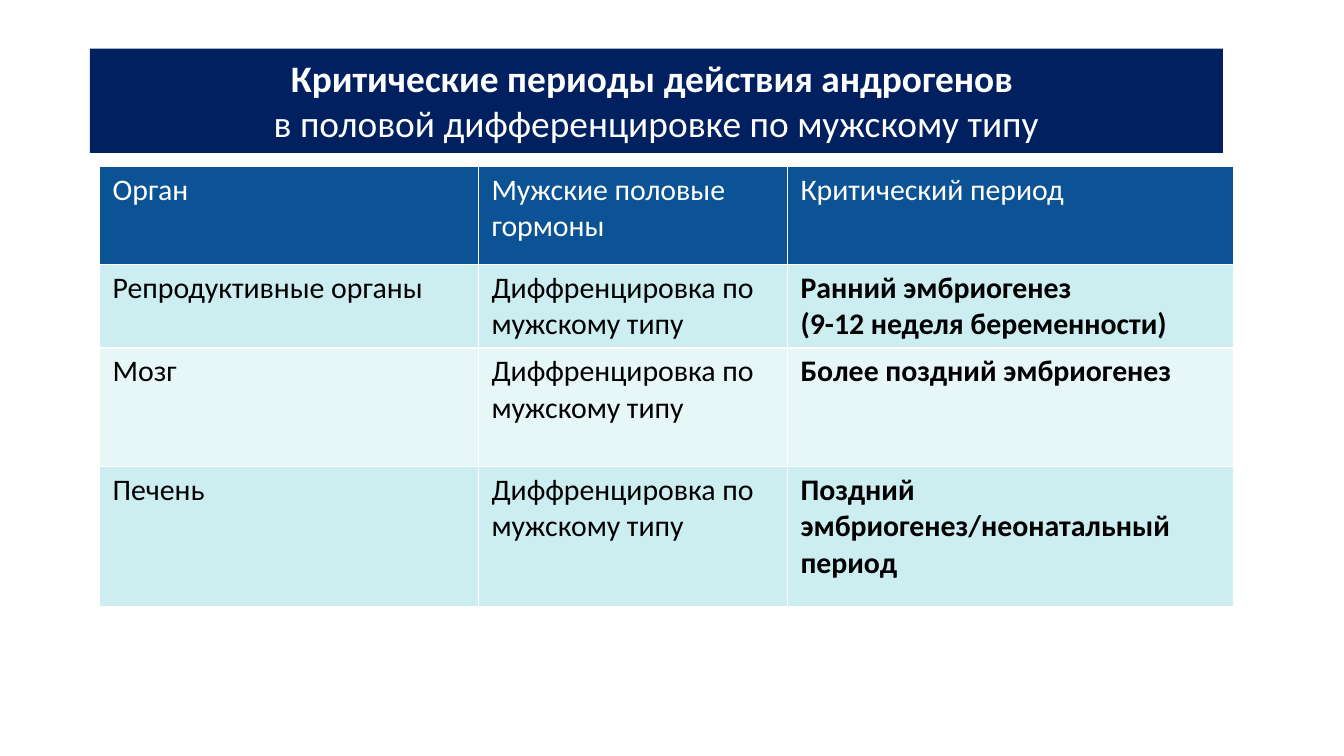
from dataclasses import dataclass

from pptx import Presentation
from pptx.dml.color import RGBColor
from pptx.enum.text import MSO_ANCHOR, MSO_AUTO_SIZE, PP_ALIGN
from pptx.slide import Slide
from pptx.text.text import TextFrame
from pptx.util import Cm, Pt

FONT = "Calibri"
WHITE = "FFFFFF"
BLACK = "000000"
NAVY = "002060"
BLUE = "0B5394"
AQUA = "CCEEF1"
PALE_AQUA = "E7F7F8"
TITLE_ONLY = 5
COLUMN_WIDTHS = (7.16, 5.84, 8.43)
EFFECT = "Диффренцировка по мужскому типу"


@dataclass
class Row:
    height: float
    fill: str
    color: str
    texts: tuple[str, str, str]
    bold_period: bool = True


ROWS = (
    Row(1.85, BLUE, WHITE,
        ("Орган", "Мужские половые гормоны", "Критический период"), False),
    Row(1.55, AQUA, BLACK,
        ("Репродуктивные органы", EFFECT,
         "Ранний эмбриогенез\n(9-12 неделя беременности)")),
    Row(2.24, PALE_AQUA, BLACK, ("Мозг", EFFECT, "Более поздний эмбриогенез")),
    Row(2.64, AQUA, BLACK,
        ("Печень", EFFECT, "Поздний эмбриогенез/неонатальный период")),
)


def rgb(value: str) -> RGBColor:
    return RGBColor.from_string(value)


def format_text(frame: TextFrame, size: float, color: str, bold: bool,
                alignment: PP_ALIGN) -> None:
    for paragraph in frame.paragraphs:
        paragraph.alignment = alignment
        for run in paragraph.runs:
            run.font.name = FONT
            run.font.size = Pt(size)
            run.font.bold = bold
            run.font.color.rgb = rgb(color)


def draw_title(slide: Slide) -> None:
    title = slide.shapes.title
    title.left, title.top = Cm(1.7), Cm(0.92)
    title.width, title.height = Cm(21.41), Cm(1.97)
    title.fill.solid()
    title.fill.fore_color.rgb = rgb(NAVY)
    frame = title.text_frame
    frame.text = ("Критические периоды действия андрогенов \n"
                  "в половой дифференцировке по мужскому типу")
    frame.word_wrap = True
    frame.auto_size = MSO_AUTO_SIZE.NONE
    frame.vertical_anchor = MSO_ANCHOR.TOP
    format_text(frame, 20, WHITE, False, PP_ALIGN.CENTER)
    frame.paragraphs[0].runs[0].font.bold = True


def draw_table(slide: Slide) -> None:
    table = slide.shapes.add_table(
        len(ROWS), len(COLUMN_WIDTHS), Cm(1.88), Cm(3.15),
        Cm(sum(COLUMN_WIDTHS)), Cm(sum(row.height for row in ROWS))).table
    for column, width in zip(table.columns, COLUMN_WIDTHS):
        column.width = Cm(width)
    for table_row, row in zip(table.rows, ROWS):
        table_row.height = Cm(row.height)
        for index, (cell, text) in enumerate(zip(table_row.cells, row.texts)):
            cell.fill.solid()
            cell.fill.fore_color.rgb = rgb(row.fill)
            cell.margin_left = cell.margin_right = Cm(0.25)
            cell.margin_top = cell.margin_bottom = Cm(0.1)
            cell.text_frame.text = text
            is_period = index == len(COLUMN_WIDTHS) - 1
            format_text(cell.text_frame, 16, row.color,
                        is_period and row.bold_period, PP_ALIGN.LEFT)


def main() -> None:
    presentation = Presentation()
    presentation.slide_width = Cm(25.4)
    presentation.slide_height = Cm(14.29)
    slide = presentation.slides.add_slide(presentation.slide_layouts[TITLE_ONLY])
    draw_title(slide)
    draw_table(slide)
    presentation.save("out.pptx")


if __name__ == "__main__":
    main()
